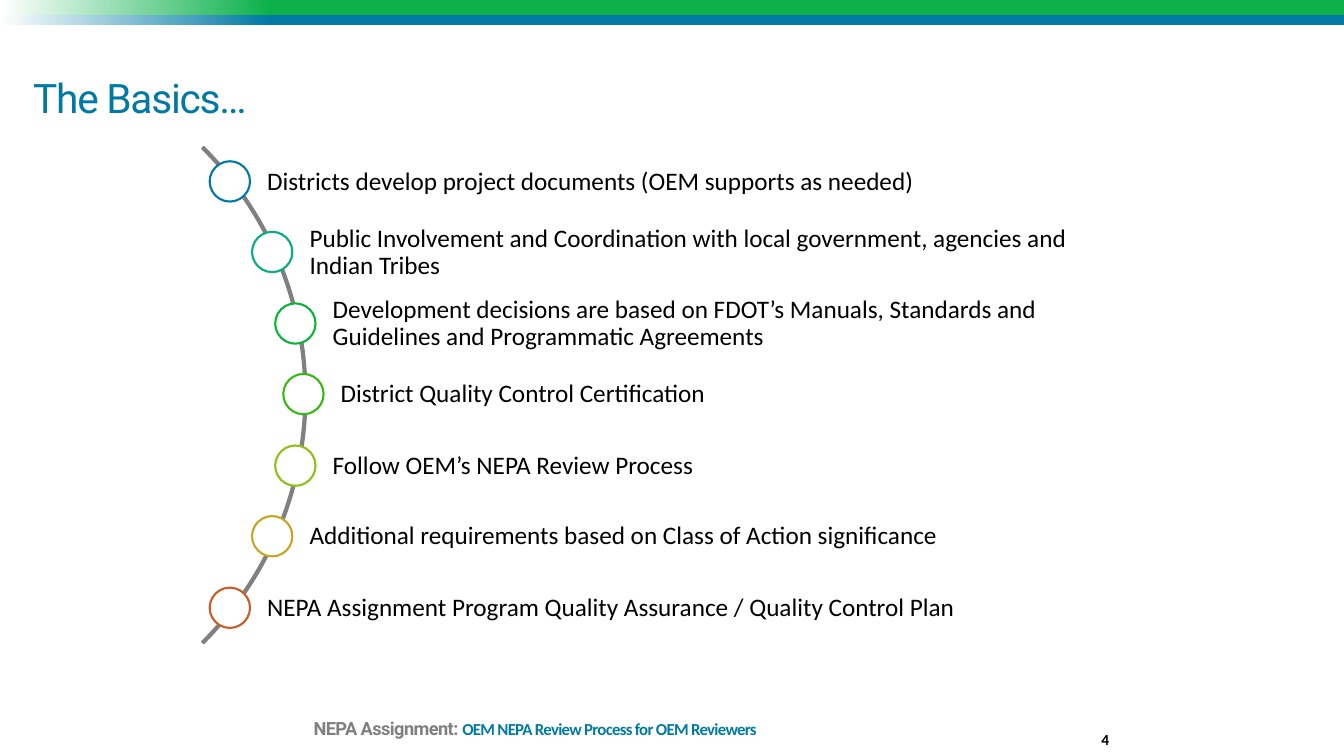
"""Build the slide "The Basics…" with its curved list of seven points."""
from pptx import Presentation
from pptx import util as u
from pptx.dml.color import RGBColor
from pptx.enum import shapes, text

PX = 9144
COLORS = {
    "white": "FFFFFF", "black": "000000", "gray": "808080",
    "green": "0DB14B", "blue": "007AA4", "footer": "007BA2",
    "teal": "05AC85", "emerald": "0AB439", "leaf": "35BA11",
    "lime": "8EC018", "gold": "C5A620", "rust": "CA5C28",
}
RGB = {name: RGBColor.from_string(value) for name, value in COLORS.items()}


def add_shape(parent, kind, bounds, fill=None, line=None):
    shape = parent.add_shape(kind, *[v * PX for v in bounds])
    shape.shadow.inherit = False
    if fill:
        shape.fill.solid()
        shape.fill.fore_color.rgb = RGB[fill]
    if line:
        shape.line.color.rgb = RGB[line]
        shape.line.width = u.Pt(1.5)
    else:
        shape.line.fill.background()
    return shape


def add_text(parent, bounds, runs, anchor="BOTTOM", margins=(0, 0, 0, 0), spacing=0.8):
    box = parent.add_textbox(*[v * PX for v in bounds])
    frame = box.text_frame
    frame.word_wrap = True
    frame.vertical_anchor = getattr(text.MSO_ANCHOR, anchor)
    frame.margin_left, frame.margin_top, frame.margin_right, frame.margin_bottom = [m * PX for m in margins]
    para = frame.paragraphs[0]
    para.line_spacing = spacing
    for words, size, font, color, bold, tracking in runs:
        for index, part in enumerate(words.split("\n")):
            if index:
                para.add_line_break()
            span = para.add_run()
            span.text = part
            span.font.size = u.Pt(size)
            span.font.name = font
            span.font.bold = bold
            span.font.color.rgb = RGB[color]
            span.font._element.set("spc", str(tracking))
    return para


deck = Presentation()
deck.slide_width, deck.slide_height = 1333 * PX, 750 * PX
page = deck.slides.add_slide(deck.slide_layouts[6])

for top, height, color in [(0, 15, "green"), (15, 10, "blue")]:
    band = add_shape(page.shapes, shapes.MSO_SHAPE.RECTANGLE, (0, top, 1333, height))
    band.fill.gradient()
    band.fill.gradient_angle = 0
    for stop, position, shade in zip(band.fill.gradient_stops, (0, 0.2), ("white", color)):
        stop.position = position
        stop.color.rgb = RGB[shade]

add_text(page.shapes, (33, 30, 1200, 90), [("The Basics…", 29, "Roboto", "blue", False, -90)])
footer = add_text(page.shapes, (311, 686, 721, 47), [
    ("NEPA Assignment: ", 13, "Roboto", "gray", True, -40),
    ("OEM NEPA Review Process for OEM Reviewers", 12, "Calibri", "footer", True, -50),
])
footer.space_after = u.Pt(12)
number = add_text(page.shapes, (1022, 703, 78, 40), [("4", 11, "Calibri", "black", True, 0)], spacing=1.0)
number.alignment = text.PP_ALIGN.RIGHT

points = [
    (228, "blue", "Districts develop project documents (OEM supports as needed)"),
    (270, "teal", "Public Involvement and Coordination with local government, agencies and \nIndian Tribes"),
    (293, "emerald", "Development decisions are based on FDOT’s Manuals, Standards and "
                     "Guidelines and Programmatic Agreements"),
    (301, "leaf", "District Quality Control Certification"),
    (293, "lime", "Follow OEM’s NEPA Review Process"),
    (270, "gold", "Additional requirements based on Class of Action significance"),
    (228, "rust", "NEPA Assignment Program Quality Assurance / Quality Control Plan"),
]
curve = page.shapes.add_group_shape().shapes
arc = add_shape(curve, shapes.MSO_SHAPE.BLOCK_ARC, (-392, 44, 696, 696), "gray", "gray")
for index, value in enumerate((189, 27, 0.003)):
    arc.adjustments[index] = value

for row, (center, color, words) in enumerate(points):
    middle = 180 + 141 * row // 2
    add_text(curve, (center, middle - 23, 1135 - center, 47),
             [(words, 18, "Calibri", "black", False, 0)], "MIDDLE", (37, 5, 5, 5), 0.9)
    add_shape(curve, shapes.MSO_SHAPE.OVAL, (center - 20, middle - 20, 40, 40), "white", color)

deck.save("out.pptx")
